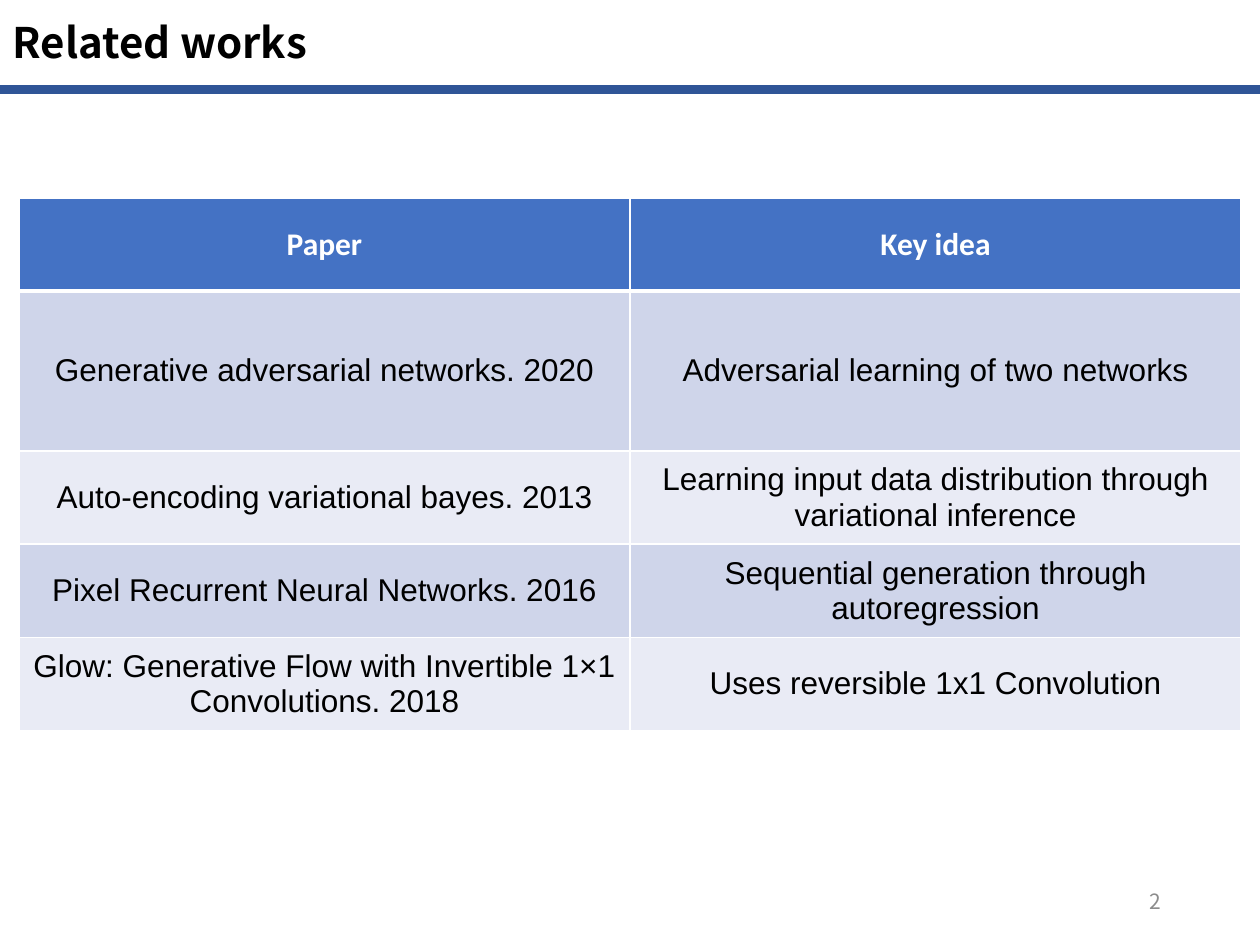
from lxml import etree
from pptx import Presentation
from pptx import util as u
from pptx.dml.color import RGBColor
from pptx.enum import text
from pptx.oxml import ns

W, H = u.Inches(10), u.Inches(7.5)
HEAD_FONT, NUMBER_FONT, BODY_FONT = "Calibri", "Noto Sans CJK KR", "Arial"
BANDS = ("CFD5EA", "E9EBF5")
ROWS = [
    ("Paper", "Key idea"),
    ("Generative adversarial networks. 2020", "Adversarial learning of two networks"),
    ("Auto-encoding variational bayes. 2013",
     "Learning input data distribution through variational inference"),
    ("Pixel Recurrent Neural Networks. 2016",
     "Sequential generation through autoregression"),
    ("Glow: Generative Flow with Invertible 1×1 Convolutions. 2018",
     "Uses reversible 1x1 Convolution"),
]
ROW_HEIGHTS = (0.74, 1.27, 0.74, 0.74, 0.74)


def rgb(value):
    """Return the colour for a hex string."""
    return RGBColor.from_string(value)


def write(tf, words, font, size, color, align, bold=False):
    """Fill a text frame with one formatted paragraph."""
    tf.text = words
    tf.word_wrap = True
    p = tf.paragraphs[0]
    p.alignment = align
    f = p.runs[0].font
    f.name, f.size, f.bold = font, u.Pt(size), bold
    f.color.rgb = rgb(color)
    return p


def place(sp, box):
    """Move a shape to a box of left, top, width and height."""
    sp.left, sp.top, sp.width, sp.height = box


def add_header(s, box):
    """Place the title in the box and a rule along its lower edge."""
    left, top, width, height = box
    sp = s.shapes.title
    place(sp, box)
    tf = sp.text_frame
    p = write(tf, "Related works", NUMBER_FONT, 24, "000000", text.PP_ALIGN.LEFT, True)
    p.line_spacing = 0.9
    tf.auto_size = text.MSO_AUTO_SIZE.NONE
    tf.vertical_anchor = text.MSO_ANCHOR.MIDDLE
    rule = s.shapes.add_connector(1, left, top + height, left + width, top + height)
    rule.line.color.rgb = rgb("2F5597")
    rule.line.width = u.Pt(5)
    etree.SubElement(rule._element.spPr, ns.qn("a:effectLst"))


def set_borders(cell, bottom):
    """Give a cell white borders, with its own width at the bottom."""
    tcPr = cell._tc.get_or_add_tcPr()
    for i, (side, width) in enumerate((("L", 1), ("R", 1), ("T", 1), ("B", bottom))):
        ln = etree.Element(ns.qn(f"a:ln{side}"), w=str(u.Pt(width)))
        fill = etree.SubElement(ln, ns.qn("a:solidFill"))
        etree.SubElement(fill, ns.qn("a:srgbClr"), val="FFFFFF")
        tcPr.insert(i, ln)


def add_papers(s, box):
    """Place the table of papers in the box."""
    table = s.shapes.add_table(len(ROWS), len(ROWS[0]), *box).table
    for i, (row, height) in enumerate(zip(ROWS, ROW_HEIGHTS)):
        table.rows[i].height = u.Inches(height)
        head = i == 0
        font, color = (HEAD_FONT, "FFFFFF") if head else (BODY_FONT, "000000")
        for j, words in enumerate(row):
            cell = table.cell(i, j)
            write(cell.text_frame, words, font, 18, color, text.PP_ALIGN.CENTER, head)
            cell.vertical_anchor = text.MSO_ANCHOR.MIDDLE
            cell.fill.solid()
            cell.fill.fore_color.rgb = rgb("4472C4" if head else BANDS[(i - 1) % 2])
            set_borders(cell, 3 if head else 1)


def add_number(s, box):
    """Place the slide number at the right of the box."""
    tf = s.shapes.add_textbox(*box).text_frame
    write(tf, "2", NUMBER_FONT, 12, "8C8C8C", text.PP_ALIGN.RIGHT)
    tf.vertical_anchor = text.MSO_ANCHOR.MIDDLE


def main():
    """Build and save the slide."""
    prs = Presentation()
    prs.slide_width, prs.slide_height = W, H
    s = prs.slides.add_slide(prs.slide_layouts[5])
    add_header(s, (0, 0, W, u.Inches(0.71)))
    add_number(s, [u.Inches(v) for v in (7.06, 6.95, 2.25, 0.4)])
    add_papers(s, [u.Inches(v) for v in (0.15, 1.57, 9.7, sum(ROW_HEIGHTS))])
    prs.save("out.pptx")


if __name__ == "__main__":
    main()
